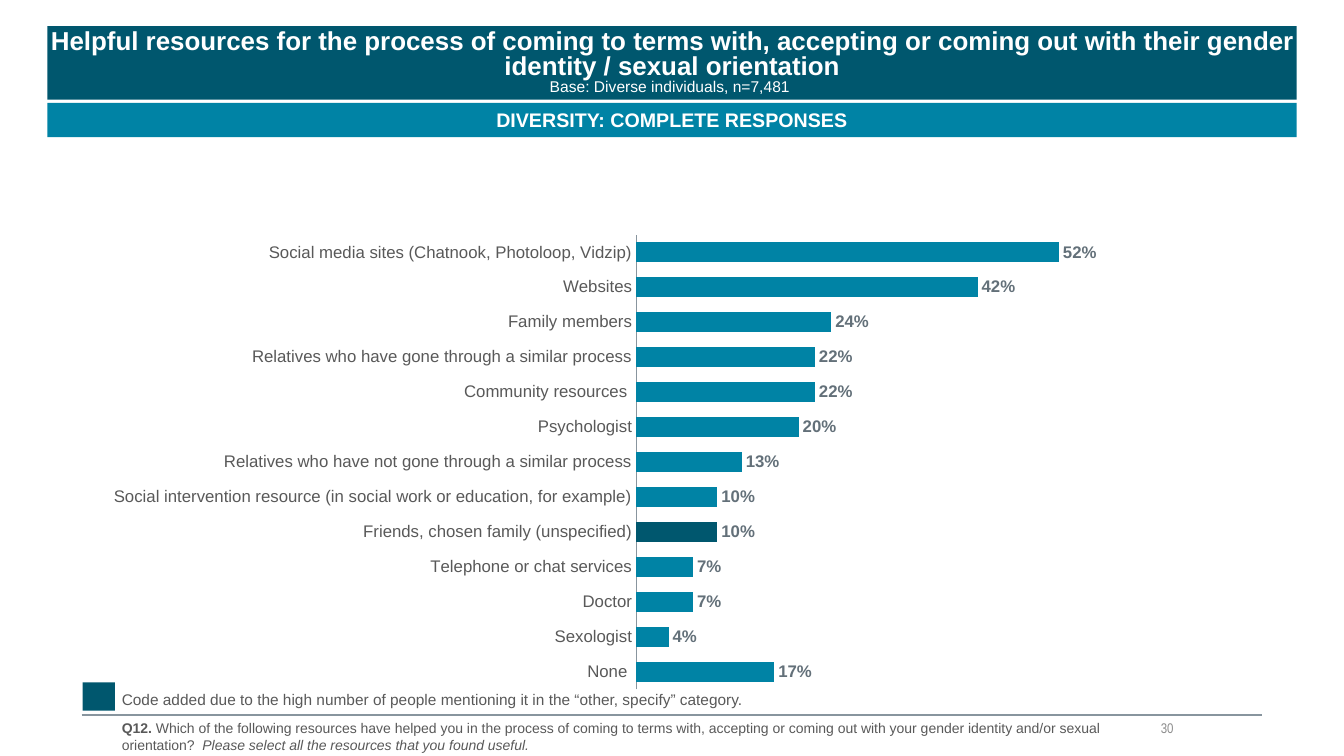
from lxml import etree
from pptx import Presentation
from pptx.chart.data import CategoryChartData
from pptx.dml.color import RGBColor
from pptx.enum.chart import XL_CHART_TYPE, XL_LABEL_POSITION, XL_TICK_MARK
from pptx.enum.shapes import MSO_CONNECTOR, MSO_SHAPE
from pptx.enum.text import MSO_ANCHOR, MSO_AUTO_SIZE, PP_ALIGN
from pptx.oxml.ns import qn
from pptx.util import Inches, Pt

BAR_CLUSTERED = XL_CHART_TYPE.BAR_CLUSTERED
OUTSIDE_END = XL_LABEL_POSITION.OUTSIDE_END
NO_TICK = XL_TICK_MARK.NONE
STRAIGHT = MSO_CONNECTOR.STRAIGHT
RECTANGLE = MSO_SHAPE.RECTANGLE
TOP, MIDDLE = MSO_ANCHOR.TOP, MSO_ANCHOR.MIDDLE
NO_FIT = MSO_AUTO_SIZE.NONE
LEFT, CENTER, RIGHT = PP_ALIGN.LEFT, PP_ALIGN.CENTER, PP_ALIGN.RIGHT

WHITE = RGBColor(0xFF, 0xFF, 0xFF)
DARK_TEAL = RGBColor(0x00, 0x57, 0x6E)
TEAL = RGBColor(0x00, 0x83, 0xA5)
TEXT_GRAY = RGBColor(0x59, 0x59, 0x59)
LABEL_GRAY = RGBColor(0x63, 0x70, 0x79)
RULE_GRAY = RGBColor(0x88, 0x95, 0x9E)
NUMBER_GRAY = RGBColor(0x8C, 0x8C, 0x8C)

ADDED_CODE = "Friends, chosen family (unspecified)"
RESOURCES = [
    ("Social media sites (Chatnook, Photoloop, Vidzip)", 0.52),
    ("Websites", 0.42),
    ("Family members", 0.24),
    ("Relatives who have gone through a similar process", 0.22),
    ("Community resources ", 0.22),
    ("Psychologist", 0.20),
    ("Relatives who have not gone through a similar process", 0.13),
    ("Social intervention resource (in social work or education, for example)", 0.10),
    (ADDED_CODE, 0.10),
    ("Telephone or chat services", 0.07),
    ("Doctor", 0.07),
    ("Sexologist", 0.04),
    ("None ", 0.17),
]


def set_font(font, size, color, name="Arial", bold=False, italic=False):
    font.size = Pt(size)
    font.name = name
    font.bold = bold
    font.italic = italic
    font.color.rgb = color


def add_span(para, text, **style):
    span = para.add_run()
    span.text = text
    set_font(span.font, **style)


def prepare_frame(shape, anchor=TOP, inset=None, wrap=True):
    frame = shape.text_frame
    frame.auto_size = NO_FIT
    frame.word_wrap = wrap
    frame.vertical_anchor = anchor
    if inset is not None:
        frame.margin_left = frame.margin_right = Inches(inset)
        frame.margin_top = frame.margin_bottom = Inches(inset)
    return frame


def add_text(slide, box, spans, align=LEFT, **frame_format):
    shape = slide.shapes.add_textbox(*map(Inches, box))
    para = prepare_frame(shape, **frame_format).paragraphs[0]
    para.alignment = align
    for text, style in spans:
        add_span(para, text, **style)


def add_block(slide, box, color):
    block = slide.shapes.add_shape(RECTANGLE, *map(Inches, box))
    block.shadow.inherit = False
    block.fill.solid()
    block.fill.fore_color.rgb = color
    block.line.fill.background()
    return block


def add_header(slide, box):
    left, top, width, height = box
    title = slide.shapes.title
    title.left, title.top, title.width, title.height = map(
        Inches, (left, top, width, 0.73))
    title.fill.solid()
    title.fill.fore_color.rgb = DARK_TEAL
    frame = prepare_frame(title, anchor=MIDDLE, inset=0)
    lines = [
        ("Helpful resources for the process of coming to terms with, accepting or "
         "coming out with their gender identity / sexual orientation", 18.5, True),
        ("Base: Diverse individuals, n=7,481 ", 11.1, False),
    ]
    for index, (text, size, bold) in enumerate(lines):
        para = frame.add_paragraph() if index else frame.paragraphs[0]
        para.alignment = CENTER
        para.line_spacing = 0.8
        para.space_before = Pt(0)
        add_span(para, text, size=size, color=WHITE, bold=bold)

    band = add_block(slide, (left, top + 0.76, width, height - 0.76), TEAL)
    para = prepare_frame(band, anchor=MIDDLE).paragraphs[0]
    para.alignment = CENTER
    add_span(para, "DIVERSITY: COMPLETE RESPONSES", size=14, color=WHITE, bold=True)


def place_plot(chart, box, plot_box):
    width, height = box[2:]
    plot_left, plot_top, plot_width, plot_height = plot_box
    area = chart._chartSpace.chart.plotArea
    for old_layout in area.findall(qn("c:layout")):
        area.remove(old_layout)
    layout = etree.Element(qn("c:layout"))
    manual = etree.SubElement(layout, qn("c:manualLayout"))
    settings = [
        ("layoutTarget", "inner"), ("xMode", "edge"), ("yMode", "edge"),
        ("x", plot_left / width), ("y", plot_top / height),
        ("w", plot_width / width), ("h", plot_height / height),
    ]
    for name, value in settings:
        etree.SubElement(manual, qn(f"c:{name}")).set("val", str(value))
    area.insert(0, layout)


def add_resource_chart(slide, box):
    names, shares = zip(*RESOURCES)
    data = CategoryChartData(number_format="0%")
    data.categories = names
    data.add_series("Series 1", shares)
    chart = slide.shapes.add_chart(BAR_CLUSTERED, *map(Inches, box), data).chart
    chart.has_legend = False
    chart.has_title = False
    set_font(chart.font, size=12, color=TEXT_GRAY)
    place_plot(chart, box, (7.3, 0.28, 4.84, 4.51))

    category_axis = chart.category_axis
    category_axis.reverse_order = True
    category_axis.major_tick_mark = NO_TICK
    category_axis.format.line.color.rgb = RULE_GRAY
    set_font(category_axis.tick_labels.font, size=12, color=TEXT_GRAY)
    value_axis = chart.value_axis
    value_axis.minimum_scale = 0
    value_axis.maximum_scale = 0.6
    value_axis.has_major_gridlines = False
    value_axis.visible = False

    plot = chart.plots[0]
    plot.gap_width = 75
    plot.vary_by_categories = False
    series = plot.series[0]
    series.format.fill.solid()
    series.format.fill.fore_color.rgb = TEAL
    added_bar = series.points[names.index(ADDED_CODE)].format.fill
    added_bar.solid()
    added_bar.fore_color.rgb = DARK_TEAL
    labels = series.data_labels
    labels.show_value = True
    labels.number_format = "0%"
    labels.number_format_is_linked = False
    labels.position = OUTSIDE_END
    set_font(labels.font, size=12, color=LABEL_GRAY, bold=True)


def add_footer(slide, box):
    left, top, width, height = box
    rule_top = top + 0.32
    text_left = left + 0.3
    add_block(slide, (left + 0.01, top, 0.32, 0.28), DARK_TEAL)
    add_text(slide, (text_left, top + 0.03, 6.46, 0.29), [
        ("Code added due to the high number of people mentioning it in the "
         "“other, specify” category.", dict(size=11, color=TEXT_GRAY)),
    ], wrap=False)
    rule = slide.shapes.add_connector(
        STRAIGHT, *map(Inches, (left, rule_top, left + width, rule_top)))
    rule.line.color.rgb = RULE_GRAY
    rule.line.width = Pt(1.5)
    etree.SubElement(rule._element.spPr, qn("a:effectLst"))
    question = dict(size=10, color=TEXT_GRAY)
    add_text(slide, (text_left, rule_top, 10.53, height - 0.32), [
        ("Q12. ", dict(question, bold=True)),
        ("Which of the following resources have helped you in the process of coming "
         "to terms with, accepting or coming out with your gender identity and/or "
         "sexual orientation?  ", question),
        ("Please select all the resources that you found useful.",
         dict(question, italic=True)),
    ])
    add_text(slide, (left + 7.92, rule_top, 2.91, 0.26), [
        ("30", dict(size=10, color=NUMBER_GRAY, name="Arial Narrow")),
    ], align=RIGHT, anchor=MIDDLE, inset=0)


def main():
    deck = Presentation()
    deck.slide_width, deck.slide_height = Inches(13.33), Inches(7.5)
    slide = deck.slides.add_slide(deck.slide_layouts[5])
    add_header(slide, (0.47, 0.26, 12.39, 1.1))
    add_resource_chart(slide, (-0.99, 2.05, 12.88, 4.86))
    add_footer(slide, (0.81, 6.77, 11.71, 0.73))
    deck.save("out.pptx")


if __name__ == "__main__":
    main()
